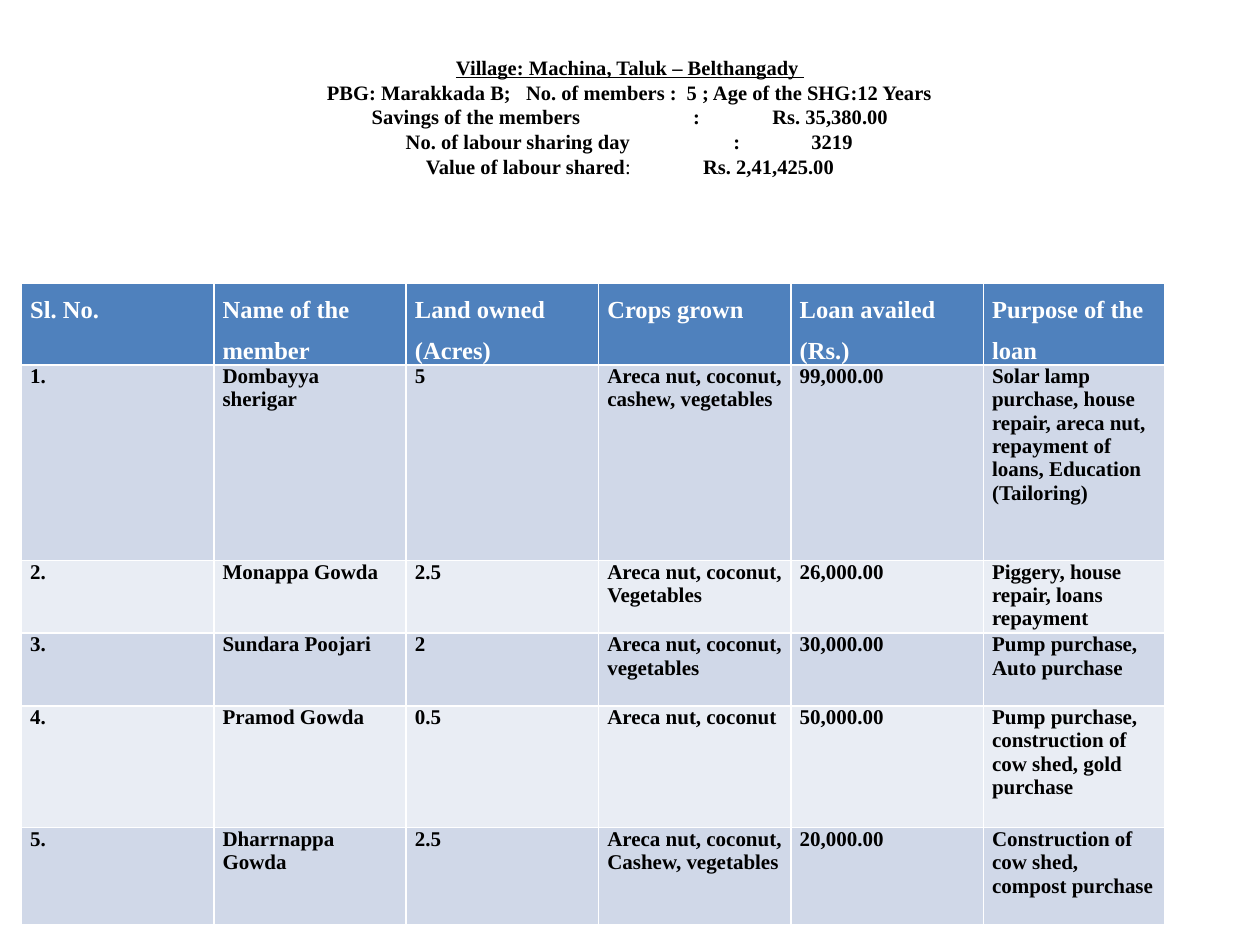
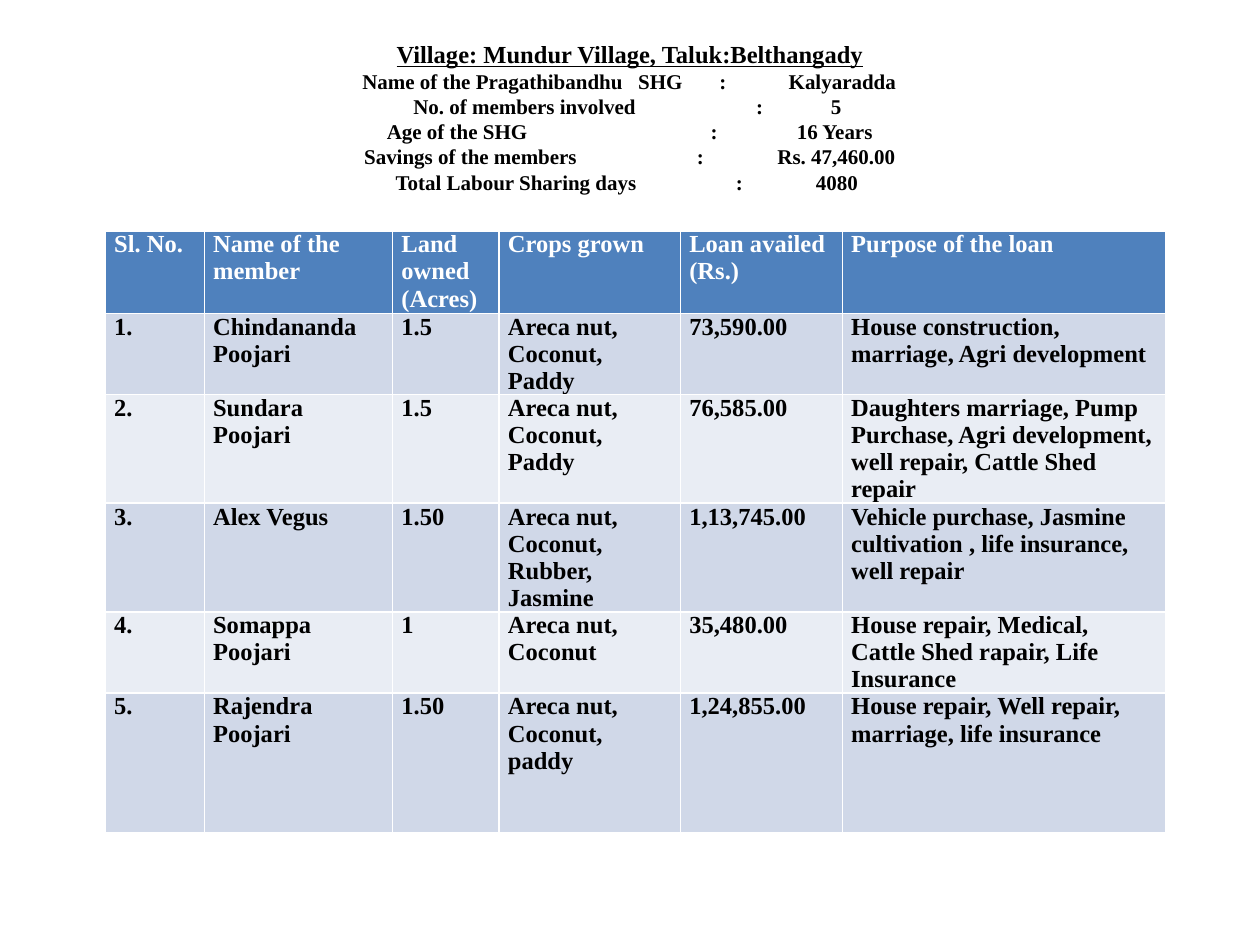
"""Build two slides that profile self-help groups and the loans of their members."""
import dataclasses

import lxml.etree
import pptx
import pptx.dml.color
import pptx.enum.text
import pptx.oxml.ns
import pptx.util


@dataclasses.dataclass(frozen=True)
class Theme:
    font: str = "Times New Roman"
    ink: str = "000000"
    header_ink: str = "FFFFFF"
    header_fill: str = "4F81BD"
    row_fills: tuple = ("D0D8E8", "E9EDF4")
    header_size: float = 14
    title_spacing: float = 1.0
    cell_inset: float = 0.07


THEME = Theme()


def add_text(paragraph, text, *, size, color=THEME.ink, bold=True, underline=False):
    """Append one formatted run to a paragraph."""
    run = paragraph.add_run()
    run.text = text
    run.font.name = THEME.font
    run.font.size = pptx.util.Pt(size)
    run.font.bold = bold
    run.font.underline = underline
    run.font.color.rgb = pptx.dml.color.RGBColor.from_string(color)


def add_tab_stops(paragraph, positions):
    """Give a paragraph left tab stops at the given positions."""
    tab_list = lxml.etree.SubElement(
        paragraph._p.get_or_add_pPr(), pptx.oxml.ns.qn("a:tabLst"))
    for position in positions:
        lxml.etree.SubElement(
            tab_list, pptx.oxml.ns.qn("a:tab"), pos=str(int(position)), algn="l")


HEADINGS = ["Sl. No.", "Name of the member", "Land owned (Acres)", "Crops grown",
            "Loan availed (Rs.)", "Purpose of the loan"]

# Facts hold tab stops in percent of the width, then runs that alternate bold and regular.
GROUPS = [
    {
        "heading": "Village: Machina, Taluk – Belthangady ",
        "heading_size": 11.7,
        "fact_size": 11.7,
        "facts": [
            ((25.95, 41.75, 54.5),
             "\tPBG: Marakkada B;\tNo. of members :\t5 ; Age of the SHG:12 Years"),
            ((29.5, 55, 61.3), "\tSavings of the members\t:\tRs. 35,380.00"),
            ((32.2, 58.2, 64.4), "\tNo. of labour sharing day\t:\t3219"),
            ((33.8, 55.8), "\tValue of labour shared", ":\t", "Rs. 2,41,425.00"),
        ],
        "left": 1.7,
        "top": 30,
        "columns": [15.27] * 5 + [14.4],
        "rows": [8.4, 20.7, 7.7, 7.7, 12.9, 10.3],
        "header_spacing": 1.5,
        "body_size": 12,
        "members": [
            ("Dombayya sherigar", "5", "Areca nut, coconut, cashew, vegetables", "99,000.00",
             "Solar lamp purchase, house repair, areca nut, repayment of loans, "
             "Education (Tailoring)"),
            ("Monappa Gowda", "2.5", "Areca nut, coconut, Vegetables", "26,000.00",
             "Piggery, house repair, loans repayment"),
            ("Sundara Poojari", "2", "Areca nut, coconut, vegetables", "30,000.00",
             "Pump purchase, Auto purchase"),
            ("Pramod Gowda", "0.5", "Areca nut, coconut", "50,000.00",
             "Pump purchase, construction of cow shed, gold purchase"),
            ("Dharrnappa Gowda", "2.5", "Areca nut, coconut, Cashew, vegetables", "20,000.00",
             "Construction of cow shed, compost purchase"),
        ],
    },
    {
        "heading": "Village: Mundur Village, Taluk:Belthangady",
        "heading_size": 14,
        "fact_size": 12,
        "facts": [
            ((28.75, 50.65, 57.1, 62.6),
             "\tName of the Pragathibandhu\tSHG\t:\tKalyaradda"),
            ((32.8, 60, 65.95), "\tNo. of members involved\t:\t5"),
            ((30.7, 56.4, 63.25), "\tAge of the SHG\t:\t16 Years"),
            ((28.9, 55.3, 61.7), "\tSavings of the members\t:\tRs. 47,460.00"),
            ((31.4, 58.4, 64.75), "\tTotal Labour Sharing days\t:\t4080"),
        ],
        "left": 8.37,
        "top": 24.45,
        "columns": [7.85, 14.95, 8.45, 14.4, 12.85, 25.7],
        "rows": [8.7, 8.6, 11.5, 11.5, 8.6, 14.8],
        "header_spacing": 1.0,
        "body_size": 14,
        "members": [
            ("Chindananda Poojari", "1.5", "Areca nut, Coconut, Paddy", "73,590.00",
             "House construction, marriage, Agri development"),
            ("Sundara Poojari", "1.5", "Areca nut, Coconut, Paddy", "76,585.00",
             "Daughters marriage, Pump Purchase, Agri development, well repair, "
             "Cattle Shed repair"),
            ("Alex Vegus", "1.50", "Areca nut, Coconut, Rubber, Jasmine", "1,13,745.00",
             "Vehicle purchase, Jasmine cultivation , life insurance, well repair"),
            ("Somappa Poojari", "1", "Areca nut, Coconut", "35,480.00",
             "House repair, Medical, Cattle Shed rapair, Life Insurance"),
            ("Rajendra Poojari", "1.50", "Areca nut, Coconut, paddy", "1,24,855.00",
             "House repair, Well repair, marriage, life insurance"),
        ],
    },
]

presentation = pptx.Presentation()
presentation.slide_width = pptx.util.Inches(10)
presentation.slide_height = pptx.util.Inches(7.5)
across = presentation.slide_width // 100
down = presentation.slide_height // 100
title_only = presentation.slide_layouts[5]

for group in GROUPS:
    slide = presentation.slides.add_slide(title_only)

    title = slide.shapes.title
    title.left, title.top = 5 * across, 4 * down
    title.width, title.height = 90 * across, int(16.7 * down)
    frame = title.text_frame
    frame.margin_left = frame.margin_right = 0
    frame.word_wrap = True
    frame.auto_size = pptx.enum.text.MSO_AUTO_SIZE.NONE
    frame.vertical_anchor = pptx.enum.text.MSO_ANCHOR.MIDDLE

    paragraph = frame.paragraphs[0]
    paragraph.alignment = pptx.enum.text.PP_ALIGN.CENTER
    paragraph.line_spacing = THEME.title_spacing
    add_text(paragraph, group["heading"], size=group["heading_size"], underline=True)
    for stops, *runs in group["facts"]:
        paragraph = frame.add_paragraph()
        paragraph.alignment = pptx.enum.text.PP_ALIGN.LEFT
        paragraph.line_spacing = THEME.title_spacing
        add_tab_stops(paragraph, [stop * across - title.left for stop in stops])
        for index, text in enumerate(runs):
            add_text(paragraph, text, size=group["fact_size"], bold=index % 2 == 0)

    records = [HEADINGS] + [
        (f"{number}.", *member) for number, member in enumerate(group["members"], 1)]
    table = slide.shapes.add_table(
        len(records), len(HEADINGS),
        int(group["left"] * across), int(group["top"] * down),
        int(sum(group["columns"]) * across), int(sum(group["rows"]) * down)).table
    for column, share in zip(table.columns, group["columns"]):
        column.width = int(share * across)

    for row_index, (row, share, record) in enumerate(
            zip(table.rows, group["rows"], records)):
        row.height = int(share * down)
        is_header = row_index == 0
        fill = THEME.header_fill if is_header else THEME.row_fills[(row_index - 1) % 2]
        for cell, text in zip(row.cells, record):
            cell.fill.solid()
            cell.fill.fore_color.rgb = pptx.dml.color.RGBColor.from_string(fill)
            cell.margin_left = cell.margin_right = pptx.util.Inches(THEME.cell_inset)
            cell.margin_top = cell.margin_bottom = 0
            paragraph = cell.text_frame.paragraphs[0]
            paragraph.line_spacing = group["header_spacing"] if is_header else 1.0
            add_text(paragraph, text,
                     size=THEME.header_size if is_header else group["body_size"],
                     color=THEME.header_ink if is_header else THEME.ink)

presentation.save("out.pptx")
